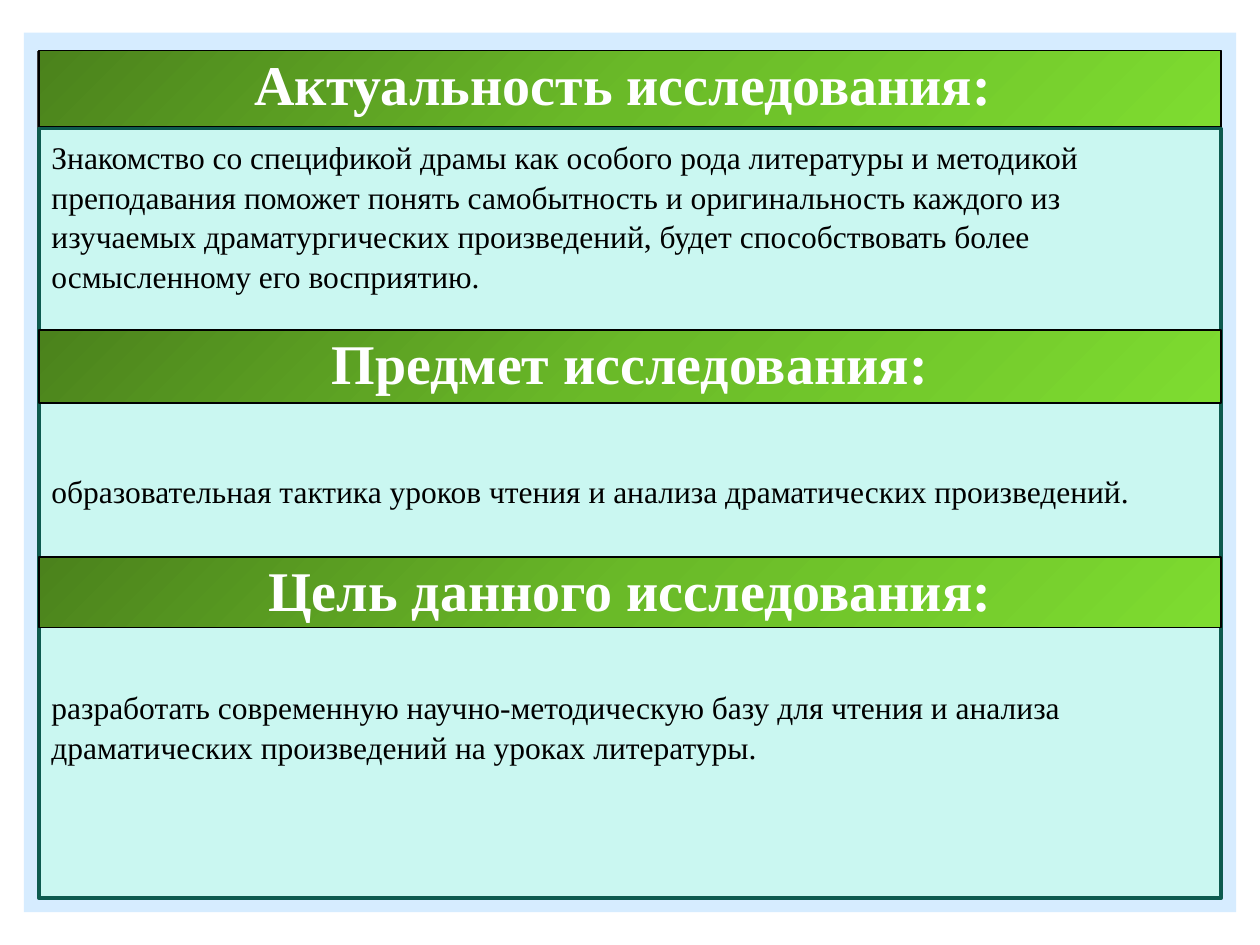
from copy import deepcopy

from pptx import Presentation
from pptx import util as u
from pptx.dml.color import RGBColor
from pptx.enum import shapes, text
from pptx.oxml.ns import qn


def color(value):
    return RGBColor.from_string(value)


class SlideBuilder:
    """Holds the style and the current slide, and draws each kind of element."""

    font = "Times New Roman"
    left, width = 0.31, 9.38
    gradient = [(0, "4B821C"), (0.5, "6ABA28"), (1, "7EDC30")]

    def __init__(self, slide):
        self.slide = slide

    def panel(self, left, top, width, height, fill=None, line=None, weight=1):
        shape = self.slide.shapes.add_shape(
            shapes.MSO_SHAPE.RECTANGLE, *map(u.Inches, (left, top, width, height)))
        shape.shadow.inherit = False
        if fill:
            shape.fill.solid()
            shape.fill.fore_color.rgb = color(fill)
        else:
            shape.fill.background()
        if line:
            shape.line.color.rgb = color(line)
            shape.line.width = u.Pt(weight)
        else:
            shape.line.fill.background()
        return shape

    def format_runs(self, paragraph, size, font_color, bold=False):
        for run in paragraph.runs:
            run.font.name = self.font
            run.font.size = u.Pt(size)
            run.font.bold = bold
            run.font.color.rgb = color(font_color)

    def heading(self, top, height, title):
        shape = self.panel(self.left, top, self.width, height, line="000000")
        shape.fill.gradient()
        shape.fill.gradient_angle = 315
        stop_list = shape._element.spPr.find(".//" + qn("a:gsLst"))
        stop_list.insert(1, deepcopy(stop_list[0]))
        for stop, (position, value) in zip(shape.fill.gradient_stops, self.gradient):
            stop.position = position
            stop.color.rgb = color(value)
        frame = shape.text_frame
        frame.text = title
        frame.vertical_anchor = text.MSO_ANCHOR.TOP
        paragraph = frame.paragraphs[0]
        paragraph.alignment = text.PP_ALIGN.CENTER
        paragraph.line_spacing = 0.9
        self.format_runs(paragraph, 32, "FFFFFF", bold=True)

    def body(self, top, height, paragraphs, gap):
        box = self.slide.shapes.add_textbox(
            *map(u.Inches, (self.left, top, self.width, height)))
        frame = box.text_frame
        frame.word_wrap = True
        frame.text = "\n".join(paragraphs)
        for index, paragraph in enumerate(frame.paragraphs):
            paragraph.line_spacing = 1.05
            paragraph.space_before = u.Pt(gap if index else 0)
            self.format_runs(paragraph, 18, "000000")


def main():
    presentation = Presentation()
    presentation.slide_width = u.Inches(10)
    presentation.slide_height = u.Inches(7.5)
    builder = SlideBuilder(presentation.slides.add_slide(presentation.slide_layouts[6]))

    builder.panel(0.19, 0.26, 9.62, 6.98, fill="D6ECFF")
    builder.panel(0.3, 0.41, 9.39, 6.68, line="404040", weight=0.5)
    builder.heading(0.4, 0.61, "Актуальность исследования: ")
    builder.panel(builder.left, 1.02, builder.width, 6.11,
                  fill="CAF7F1", line="0D5A4F", weight=2.25)
    builder.body(1.03, 6.11, [
        "Знакомство со спецификой драмы как особого рода литературы и методикой "
        "преподавания поможет понять самобытность и оригинальность каждого из "
        "изучаемых драматургических произведений, будет способствовать более "
        "осмысленному его восприятию.",
        "образовательная тактика уроков чтения и анализа драматических произведений.",
        "разработать современную научно-методическую базу для чтения и анализа "
        "драматических произведений на уроках литературы.",
    ], gap=100.5)
    builder.heading(2.62, 0.58, "Предмет исследования:")
    builder.heading(4.42, 0.56, "Цель данного исследования:")

    presentation.save("out.pptx")


if __name__ == "__main__":
    main()
